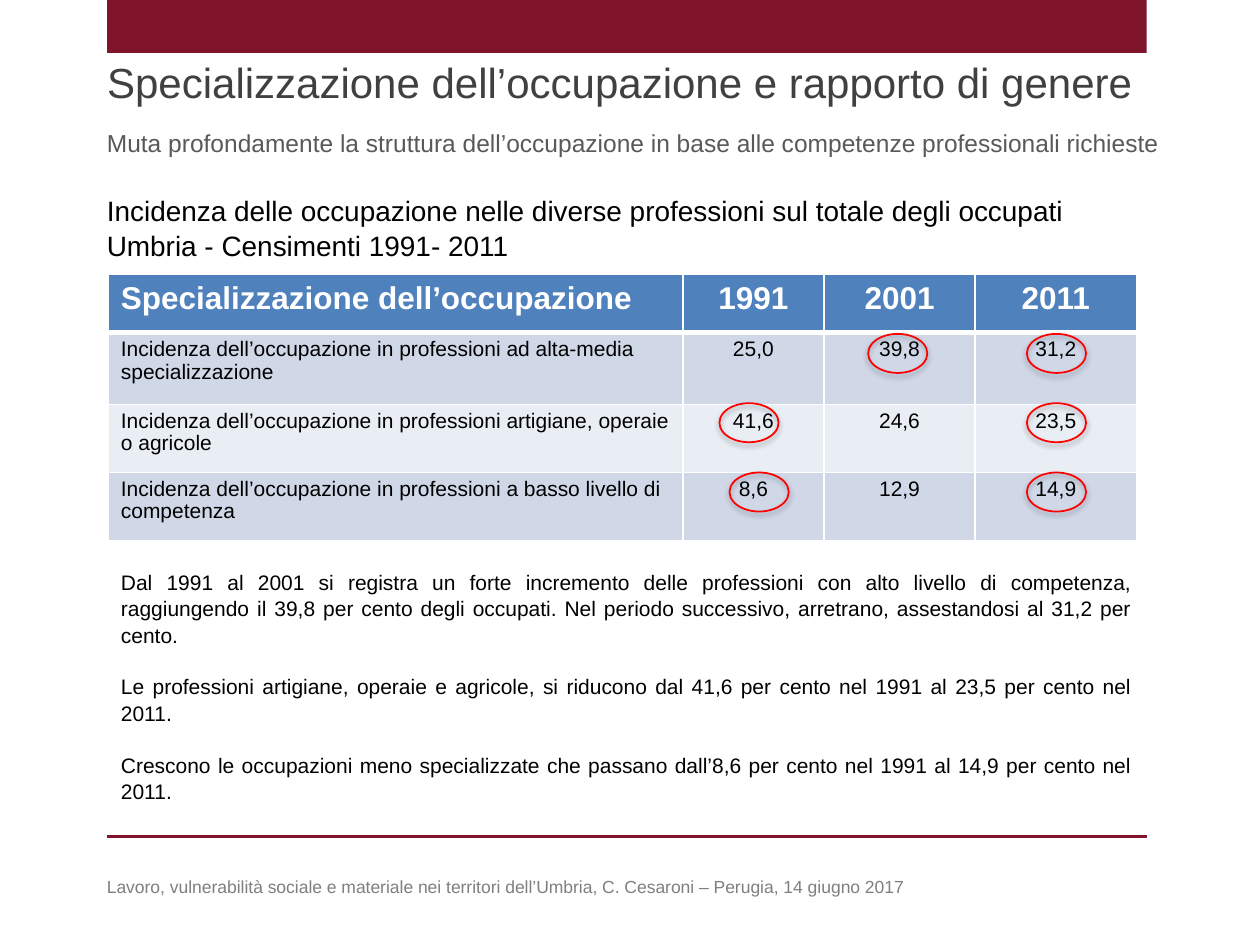
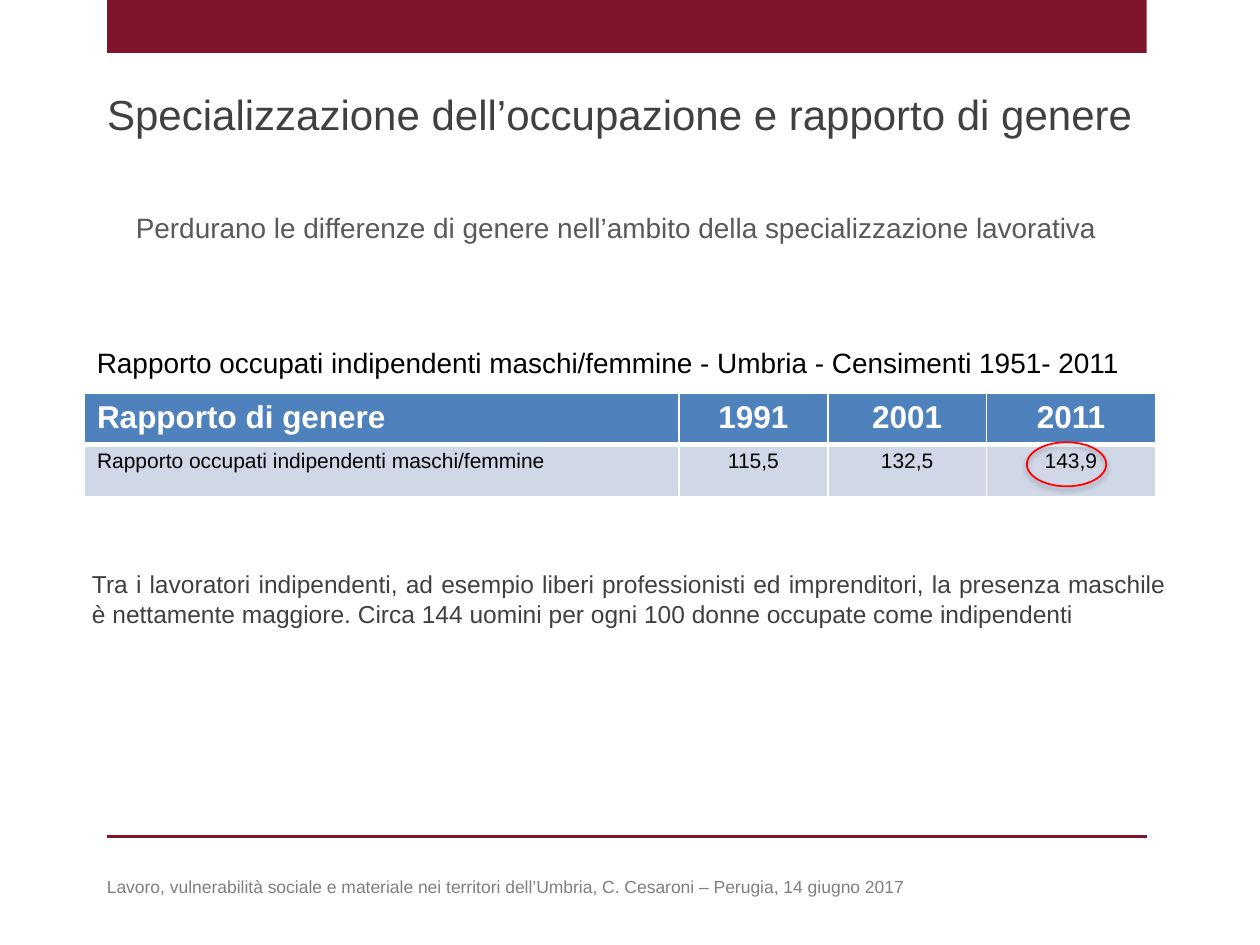
"""Two slides on job specialisation and gender ratio in Umbria."""
from lxml.etree import SubElement
from pptx import Presentation
from pptx.dml.color import RGBColor
from pptx.enum.shapes import MSO_CONNECTOR, MSO_SHAPE
from pptx.enum.text import MSO_ANCHOR, MSO_AUTO_SIZE, PP_ALIGN
from pptx.oxml.ns import qn
from pptx.util import Inches, Pt

COLORS = {
    "burgundy": "7F142A", "title": "404040", "subtitle": "595959", "footer": "7F7F7F",
    "black": "000000", "white": "FFFFFF", "header": "4F81BD",
    "odd_row": "D0D8E8", "even_row": "E9EDF4", "highlight": "FF0000",
}
RGB = {role: RGBColor.from_string(value) for role, value in COLORS.items()}
FONT = "Arial"
TITLE = "Specializzazione dell’occupazione e rapporto di genere"
FOOTER = ("Lavoro, vulnerabilità sociale e materiale nei territori dell’Umbria, "
          "C. Cesaroni – Perugia, 14 giugno 2017")
YEARS = ["1991", "2001", "2011"]

TOPICS = [
    {
        "title_top": 0.4,
        "subtitle": ("Muta profondamente la struttura dell’occupazione in base alle "
                     "competenze professionali richieste", (0.75, 0.97, 8.9, 0.34), 14),
        "caption": ("Incidenza delle occupazione nelle diverse professioni sul totale "
                    "degli occupati Umbria - Censimenti 1991- 2011", (0.75, 1.47, 8.23, 0.65)),
        "table_at": (0.86, 2.18),
        "columns": [4.56, 1.12, 1.2, 1.28],
        "heights": [0.46, 0.57, 0.54, 0.54],
        "rows": [
            ["Specializzazione dell’occupazione", *YEARS],
            ["Incidenza dell’occupazione in professioni ad alta-media specializzazione",
             "25,0", "39,8", "31,2"],
            ["Incidenza dell’occupazione in professioni artigiane, operaie o agricole",
             "41,6", "24,6", "23,5"],
            ["Incidenza dell’occupazione in professioni a basso livello di competenza",
             "8,6", "12,9", "14,9"],
        ],
        "ring_size": (0.47, 0.31),
        "rings": [(6.89, 2.65), (8.15, 2.65), (5.71, 3.2),
                  (8.15, 3.2), (5.79, 3.75), (8.15, 3.75)],
        "comment": [
            "Dal 1991 al 2001 si registra un forte incremento delle professioni con alto "
            "livello di competenza, raggiungendo il 39,8 per cento degli occupati. Nel "
            "periodo successivo, arretrano, assestandosi al 31,2 per cento.",
            "Le professioni artigiane, operaie e agricole, si riducono dal 41,6 per cento "
            "nel 1991 al 23,5 per cento nel 2011.",
            "Crescono le occupazioni meno specializzate che passano dall’8,6 per cento "
            "nel 1991 al 14,9 per cento nel 2011.",
        ],
        "comment_style": ((0.86, 4.46, 8.23, 2.15), 12, "black", 1.05),
    },
    {
        "title_top": 0.65,
        "subtitle": ("Perdurano le differenze di genere nell’ambito della specializzazione "
                     "lavorativa", (0.98, 1.62, 8.5, 0.37), 16),
        "caption": ("Rapporto occupati indipendenti maschi/femmine - Umbria - "
                    "Censimenti 1951- 2011", (0.67, 2.68, 8.58, 0.37)),
        "table_at": (0.67, 3.12),
        "columns": [4.72, 1.18, 1.26, 1.34],
        "heights": [0.41, 0.41],
        "rows": [
            ["Rapporto di genere", *YEARS],
            ["Rapporto occupati indipendenti maschi/femmine", "115,5", "132,5", "143,9"],
        ],
        "ring_size": (0.63, 0.35),
        "rings": [(8.15, 3.51)],
        "comment": [
            "Tra i lavoratori indipendenti, ad esempio liberi professionisti ed imprenditori, "
            "la presenza maschile è nettamente maggiore. Circa 144 uomini per ogni 100 donne "
            "occupate come indipendenti",
        ],
        "comment_style": ((0.63, 4.46, 8.73, 0.57), 14, "title", 1.03),
    },
]


def write(frame, paragraphs, size, color, align=PP_ALIGN.LEFT, spacing=1.0, bold=False):
    frame.word_wrap = True
    for index, text in enumerate(paragraphs):
        paragraph = frame.add_paragraph() if index else frame.paragraphs[0]
        paragraph.alignment = align
        paragraph.line_spacing = spacing
        paragraph.space_before = Pt(14.4 if index else 0)
        run = paragraph.add_run()
        run.text = text
        run.font.name = FONT
        run.font.size = Pt(size)
        run.font.bold = bold
        run.font.color.rgb = RGB[color]


def place(placeholder, left, top, width, height):
    placeholder.left, placeholder.top = Inches(left), Inches(top)
    placeholder.width, placeholder.height = Inches(width), Inches(height)
    placeholder.text_frame.auto_size = MSO_AUTO_SIZE.NONE
    placeholder.text_frame.vertical_anchor = MSO_ANCHOR.TOP


prs = Presentation()
prs.slide_width, prs.slide_height = Inches(10), Inches(7.5)

for topic in TOPICS:
    slide = prs.slides.add_slide(prs.slide_layouts[1])
    shapes = slide.shapes

    band = shapes.add_shape(MSO_SHAPE.RECTANGLE, Inches(0.85), 0, Inches(8.25), Inches(0.42))
    band.shadow.inherit = False
    band.fill.solid()
    band.fill.fore_color.rgb = RGB["burgundy"]
    band.line.fill.background()

    rule = shapes.add_connector(MSO_CONNECTOR.STRAIGHT, Inches(0.85), Inches(6.64),
                                Inches(9.1), Inches(6.64))
    rule.line.color.rgb = RGB["burgundy"]
    rule.line.width = Pt(2)
    SubElement(rule.element.spPr, qn("a:effectLst"))

    place(shapes.title, 0.75, topic["title_top"], 8.58, 0.5)
    write(shapes.title.text_frame, [TITLE], 24, "title")

    comment_box, comment_size, comment_color, comment_spacing = topic["comment_style"]
    comment = slide.placeholders[1]
    place(comment, *comment_box)
    write(comment.text_frame, topic["comment"], comment_size, comment_color,
          PP_ALIGN.JUSTIFY, comment_spacing)
    for properties in comment.element.iter(qn("a:pPr")):
        properties.set("marL", "0")
        properties.set("indent", "0")
        SubElement(properties, qn("a:buNone"))

    subtitle, subtitle_box, subtitle_size = topic["subtitle"]
    caption, caption_box = topic["caption"]
    for text, box, size, color, spacing in [
        (subtitle, subtitle_box, subtitle_size, "subtitle", 1.0),
        (caption, caption_box, 16, "black", 1.05),
        (FOOTER, (0.75, 6.9, 6.7, 0.27), 10, "footer", 1.0),
    ]:
        label = shapes.add_textbox(*map(Inches, box))
        write(label.text_frame, [text], size, color, spacing=spacing)

    rows, columns, heights = topic["rows"], topic["columns"], topic["heights"]
    table = shapes.add_table(len(rows), len(columns), *map(Inches, topic["table_at"]),
                             Inches(sum(columns)), Inches(sum(heights))).table
    table.horz_banding = False
    for column, width in zip(table.columns, columns):
        column.width = Inches(width)
    for r, values in enumerate(rows):
        table.rows[r].height = Inches(heights[r])
        header = r == 0
        row_fill = "header" if header else "odd_row" if r % 2 else "even_row"
        for c, value in enumerate(values):
            cell = table.cell(r, c)
            write(cell.text_frame, [value], 18 if header else 12,
                  "white" if header else "black",
                  PP_ALIGN.CENTER if c else PP_ALIGN.LEFT, 1.0 if header else 0.95, header)
            borders = cell._tc.get_or_add_tcPr()
            for side in "LRTB" if header else "LRB":
                weight = Pt(3 if header and side == "B" else 1)
                border = SubElement(borders, qn(f"a:ln{side}"), w=str(weight))
                SubElement(SubElement(border, qn("a:solidFill")), qn("a:srgbClr"),
                           val=COLORS["white"])
            cell.fill.solid()
            cell.fill.fore_color.rgb = RGB[row_fill]

    for spot in topic["rings"]:
        ring = shapes.add_shape(MSO_SHAPE.OVAL, *map(Inches, spot + topic["ring_size"]))
        ring.fill.background()
        ring.line.color.rgb = RGB["highlight"]
        ring.line.width = Pt(1)
        ring.shadow.inherit = False
        effects = ring.element.spPr.find(qn("a:effectLst"))
        shadow = SubElement(effects, qn("a:outerShdw"), blurRad=str(Pt(3.1)),
                            dist=str(Pt(1.8)), dir="5400000", rotWithShape="0")
        tint = SubElement(shadow, qn("a:srgbClr"), val=COLORS["black"])
        SubElement(tint, qn("a:alpha"), val="35000")

prs.save("out.pptx")
